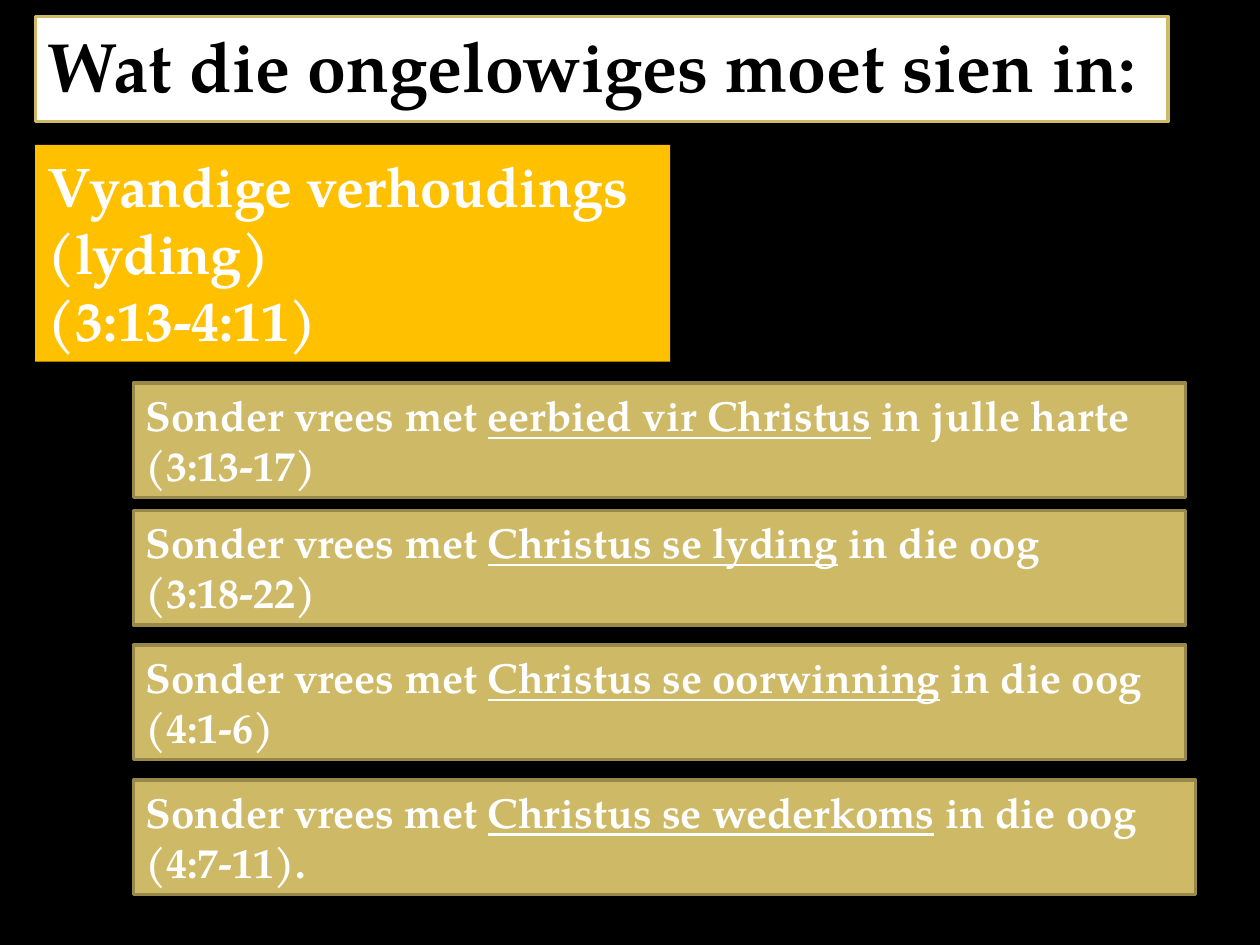
from pptx import Presentation
from pptx.dml.color import RGBColor
from pptx.enum.shapes import MSO_SHAPE
from pptx.enum.text import MSO_ANCHOR, MSO_AUTO_SIZE, PP_ALIGN
from pptx.util import Inches, Pt

RECT = MSO_SHAPE.RECTANGLE
TOP = MSO_ANCHOR.TOP
GROW = MSO_AUTO_SIZE.SHAPE_TO_FIT_TEXT
LEFT = PP_ALIGN.LEFT

BLACK = RGBColor(0x00, 0x00, 0x00)
WHITE = RGBColor(0xFF, 0xFF, 0xFF)
AMBER = RGBColor(0xFF, 0xC0, 0x00)
GOLD = RGBColor(0xCE, 0xB9, 0x66)
BRONZE = RGBColor(0x98, 0x89, 0x4B)
FONT = "TeX Gyre Pagella"

# Each point: top, width, lines of text; every second run is underlined.
POINTS = [
    (3.04, 8.35, [["Sonder vrees met ", "eerbied vir Christus",
                   " in julle harte (3:13-17)"]]),
    (4.05, 8.35, [["Sonder vrees met ", "Christus se lyding", " in die oog"],
                  ["(3:18-22)"]]),
    (5.12, 8.35, [["Sonder vrees met ", "Christus se oorwinning",
                   " in die oog (4:1-6)"]]),
    (6.19, 8.43, [["Sonder vrees met ", "Christus se wederkoms",
                   " in die oog (4:7-11)."]]),
]


def set_all(target, values):
    for name, value in values.items():
        setattr(target, name, value)


def place(shape, box):
    names = ("left", "top", "width", "height")
    set_all(shape, dict(zip(names, map(Inches, box))))


def paint(shape, fill, edge=None):
    shape.fill.solid()
    shape.fill.fore_color.rgb = fill
    if edge is None:
        shape.line.fill.background()
    else:
        shape.line.color.rgb = edge
        shape.line.width = Pt(2)


def write(shape, lines, size, color, wrap=True):
    """Fill the frame with one paragraph per line, underlining odd runs."""
    frame = shape.text_frame
    set_all(frame, {"word_wrap": wrap, "auto_size": GROW,
                    "vertical_anchor": TOP})
    for row, parts in enumerate(lines):
        para = frame.add_paragraph() if row else frame.paragraphs[0]
        set_all(para, {"alignment": LEFT, "space_before": Pt(0)})
        for spot, text in enumerate(parts):
            run = para.add_run()
            run.text = text
            set_all(run.font, {"name": FONT, "size": Pt(size), "bold": True,
                               "underline": spot % 2 == 1})
            run.font.color.rgb = color


def add_title(slide, box):
    title = slide.shapes.title
    place(title, box)
    paint(title, WHITE, GOLD)
    write(title, [["Wat die ongelowiges moet sien in:"]], 40, BLACK, False)


def add_panel(slide, box, lines, size, fill, edge=None):
    panel = slide.shapes.add_shape(RECT, *map(Inches, box))
    panel.shadow.inherit = False
    paint(panel, fill, edge)
    write(panel, lines, size, WHITE)


def main():
    deck = Presentation()
    deck.slide_width, deck.slide_height = Inches(10), Inches(7.5)
    slide = deck.slides.add_slide(deck.slide_layouts.get_by_name("Title Only"))
    back = slide.background.fill
    back.solid()
    back.fore_color.rgb = BLACK

    add_title(slide, (0.28, 0.13, 8.99, 0.77))
    add_panel(slide, (0.28, 1.15, 5.04, 1.72),
              [["Vyandige verhoudings (lyding)"], ["(3:13-4:11)"]], 32, AMBER)
    for top, width, lines in POINTS:
        add_panel(slide, (1.06, top, width, 0.91), lines, 24, GOLD, BRONZE)
    deck.save("out.pptx")


if __name__ == "__main__":
    main()
